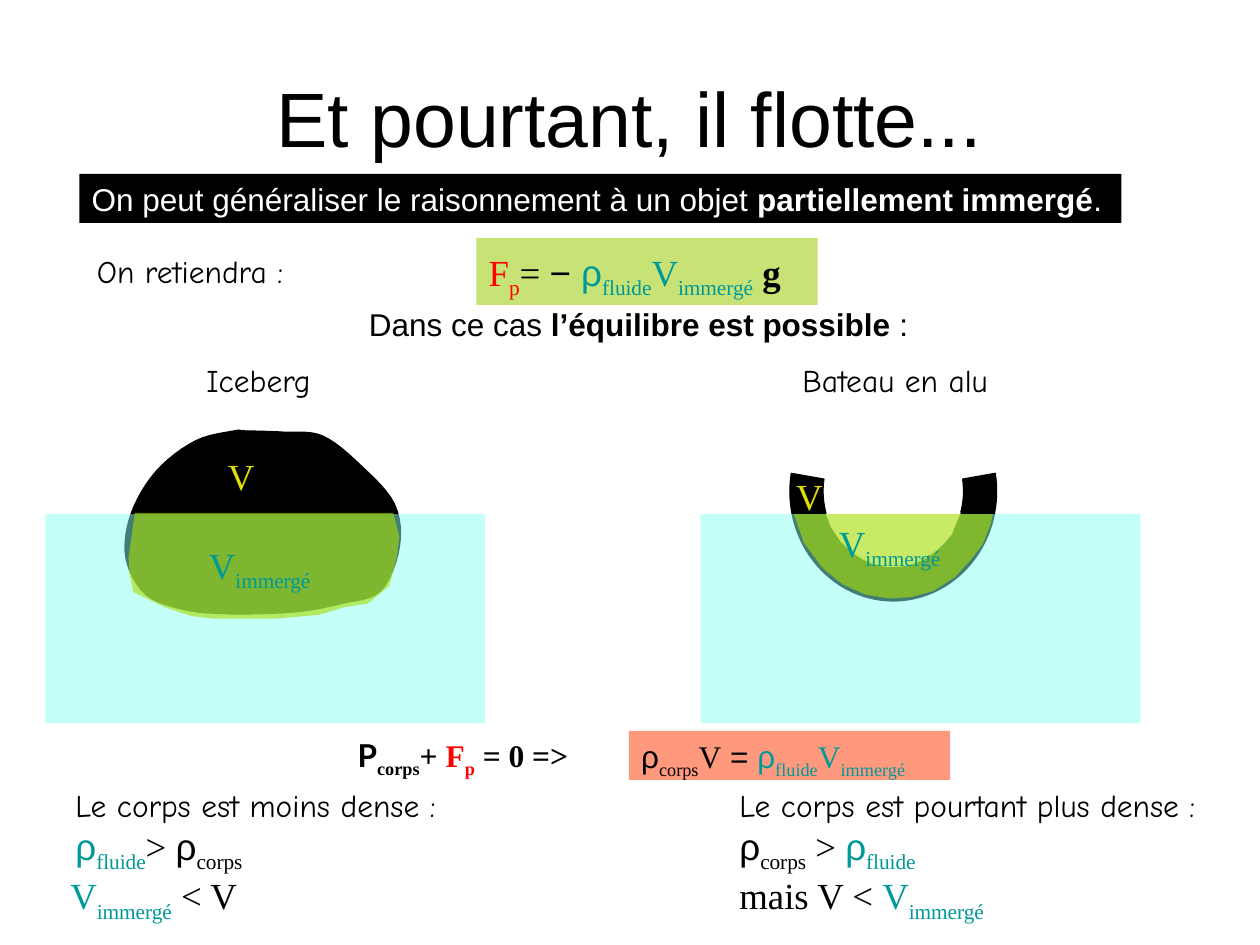
from pptx import Presentation
from pptx.dml.color import RGBColor
from pptx.enum.shapes import MSO_SHAPE
from pptx.enum.text import MSO_ANCHOR, MSO_AUTO_SIZE, PP_ALIGN
from pptx.oxml import parse_xml
from pptx.oxml.ns import nsdecls
from pptx.util import Inches, Pt

RECT, ARC = MSO_SHAPE.RECTANGLE, MSO_SHAPE.BLOCK_ARC
MIDDLE, CENTER = MSO_ANCHOR.MIDDLE, PP_ALIGN.CENTER
GROW = MSO_AUTO_SIZE.SHAPE_TO_FIT_TEXT

FONTS = {"A": "Arial", "C": "Comic Neue", "L": "Lato", "T": "Times New Roman"}
INKS = {"k": "000000", "w": "FFFFFF", "r": "FF0000", "t": "009999", "y": "DEDF03"}

TITLE = "Et pourtant, il flotte..."
FLUID = [("ρ", "At"), ("fluide", "Tts")]
BODY = [("ρ", "Ak"), ("corps", "Tks")]
SUNK = [("V", "Tt"), ("immergé", "Tts")]
FORCE = [("F", "Tr"), ("p", "Trs")]
VOLUME = [("V", "Ty")]

LABELS = [
    ((0.63, 1.38, 8.27, 0.39), "000000", False, [(18, [
        ("On peut généraliser le raisonnement à un objet ", "Aw"),
        ("partiellement immergé", "Awb"), (".", "Aw")])]),
    ((0.67, 1.95, 1.74, 0.4), None, False, [(18, [("On retiendra :", "Ck")])]),
    ((3.78, 1.93, 2.67, 0.45), None, False, [(21, FORCE + [
        ("= ", "Tk"), ("− ", "Ak")] + FLUID + SUNK + [(" g", "Tkb")])]),
    ((2.83, 2.37, 4.5, 0.39), None, False, [(18, [
        ("Dans ce cas ", "Ak"), ("l’équilibre est possible", "Akb"), (" :", "Ak")])]),
    ((1.54, 2.82, 1.04, 0.4), None, False, [(18, [("Iceberg", "Ck")])]),
    ((6.27, 2.82, 1.76, 0.4), None, False, [(18, [("Bateau en alu", "Ck")])]),
    ((1.71, 3.55, 0.41, 0.45), None, False, [(21, VOLUME)]),
    ((6.22, 3.71, 0.41, 0.45), None, False, [(21, VOLUME)]),
    ((1.56, 4.26, 1.09, 0.45), None, False, [(21, SUNK)]),
    ((6.56, 4.08, 1.09, 0.45), None, False, [(21, SUNK)]),
    ((2.74, 5.79, 2.24, 0.39), None, True, [(18, [
        ("P", "Lkb"), ("corps", "Tkbs"), ("+ ", "Tkb"), ("F", "Trb"),
        ("p", "Trbs"), (" = 0 =>", "Tkb")])]),
    ((4.99, 5.8, 2.55, 0.39), "FF997D", False, [(18,
        BODY + [("V", "Tk"), (" = ", "Ak")] + FLUID + SUNK)]),
    ((0.5, 6.19, 3.22, 0.76), None, False, [
        (18, [("Le corps est moins dense :", "Ck")]),
        (21, FLUID + [("> ", "Tk")] + BODY)]),
    ((5.77, 6.19, 4.07, 0.76), None, False, [
        (18, [("Le corps est pourtant plus dense :", "Ck")]),
        (21, BODY + [(" > ", "Tk")] + FLUID)]),
    ((0.46, 6.88, 1.61, 0.45), None, False, [(21, SUNK + [(" < V", "Tk")])]),
    ((5.77, 6.88, 2.21, 0.45), None, False, [(21, [("mais V < ", "Tk")] + SUNK)]),
]

ICE = [(1.86, 3.42), (1.55, 3.5), (1.24, 3.74), (1.04, 4.08), (1, 4.43),
       (1.16, 4.72), (1.47, 4.84), (1.77, 4.87), (2.08, 4.87), (2.4, 4.85),
       (2.71, 4.79), (3.02, 4.69), (3.17, 4.34), (3.13, 4), (2.87, 3.7),
       (2.56, 3.46), (2.25, 3.43), (1.94, 3.42)]
ICE_SUNK = [(1.07, 4.07), (1.02, 4.43), (1.03, 4.57), (1.06, 4.7), (1.31, 4.82),
            (1.52, 4.89), (1.7, 4.91), (2.19, 4.91), (2.53, 4.88), (2.73, 4.82),
            (2.92, 4.79), (3.09, 4.65), (3.15, 4.42), (3.17, 4.26), (3.12, 4.07)]
HOLLOW = [(6.56, 4.08), (6.6, 4.18), (6.68, 4.3), (6.82, 4.41), (6.93, 4.46),
          (7.02, 4.49), (7.09, 4.49), (7.22, 4.47), (7.35, 4.41), (7.48, 4.32),
          (7.55, 4.24), (7.58, 4.16), (7.62, 4.07)]
BOAT_SUNK = [(6.3, 4.08), (6.38, 4.31), (6.53, 4.51), (6.69, 4.64), (6.87, 4.72),
             (7.06, 4.75), (7.23, 4.74), (7.41, 4.69), (7.58, 4.58), (7.7, 4.45),
             (7.8, 4.32), (7.86, 4.17), (7.88, 4.08)]


def paint(shape, color, alpha=100, edge=False):
    shape.shadow.inherit = False
    shape.fill.solid()
    shape.fill.fore_color.rgb = RGBColor.from_string(color)
    if alpha < 100:
        tone = shape.fill._xPr.find(".//{*}srgbClr")
        tone.append(parse_xml(f'<a:alpha {nsdecls("a")} val="{alpha * 1000}"/>'))
    if edge:
        shape.line.color.rgb = RGBColor.from_string(color)
        shape.line.width = Pt(0.75)
    else:
        shape.line.fill.background()


def block(kind, box, *look):
    shape = slide.shapes.add_shape(kind, *map(Inches, box))
    paint(shape, *look)
    return shape


def outline(dots, *look):
    spots = [(Inches(x), Inches(y)) for x, y in dots]
    pen = slide.shapes.build_freeform(*spots[0])
    pen.add_line_segments(spots[1:], close=True)
    paint(pen.convert_to_shape(), *look)


def smooth(dots, steps=6):
    curve = []
    for i in range(len(dots)):
        a, b, c, d = (dots[(i + k) % len(dots)] for k in (-1, 0, 1, 2))
        for t in (n / steps for n in range(steps)):
            curve.append(tuple(
                b[j] + t * (c[j] - a[j]) / 2
                + t * t * (2 * a[j] - 5 * b[j] + 4 * c[j] - d[j]) / 2
                + t ** 3 * (3 * b[j] - a[j] - 3 * c[j] + d[j]) / 2
                for j in (0, 1)))
    return curve


def style(run, size, flags):
    font = run.font
    font.name, font.size = FONTS[flags[0]], Pt(size)
    font.color.rgb = RGBColor.from_string(INKS[flags[1]])
    font.bold = "b" in flags
    if "s" in flags:
        run._r.get_or_add_rPr().set("baseline", "-25000")


def label(box, fill, wrap, lines):
    shape = slide.shapes.add_textbox(*map(Inches, box))
    if fill:
        paint(shape, fill)
    frame = shape.text_frame
    frame.word_wrap, frame.auto_size = wrap, GROW
    for i, (size, runs) in enumerate(lines):
        para = frame.add_paragraph() if i else frame.paragraphs[0]
        for text, flags in runs:
            run = para.add_run()
            run.text = text
            style(run, size, flags)


deck = Presentation()
deck.slide_width, deck.slide_height = Inches(10), Inches(7.5)
slide = deck.slides.add_slide(deck.slide_layouts[5])

title = slide.shapes.title
title.left, title.top, title.width, title.height = map(Inches, (0.5, 0.3, 9, 1.25))
frame = title.text_frame
frame.text = TITLE
frame.vertical_anchor = MIDDLE
frame.paragraphs[0].alignment = CENTER
style(frame.paragraphs[0].runs[0], 44, "Ak")

block(RECT, (3.78, 1.89, 2.71, 0.53), "99CC00", 54)
outline(smooth(ICE), "000000", 100, True)
boat = block(ARC, (6.27, 3.03, 1.64, 1.74), "000000", 100, True)
for i, value in enumerate((350 * 0.6, 190 * 0.6, 0.16)):
    boat.adjustments[i] = value
for left in (0.36, 5.56):
    block(RECT, (left, 4.08, 3.49, 1.66), "87FFF1", 49)
outline(ICE_SUNK, "A6DD02", 60)
outline(HOLLOW, "FFFFFF", 100, True)
outline(BOAT_SUNK, "A6DD02", 61)

for item in LABELS:
    label(*item)

deck.save("out.pptx")
